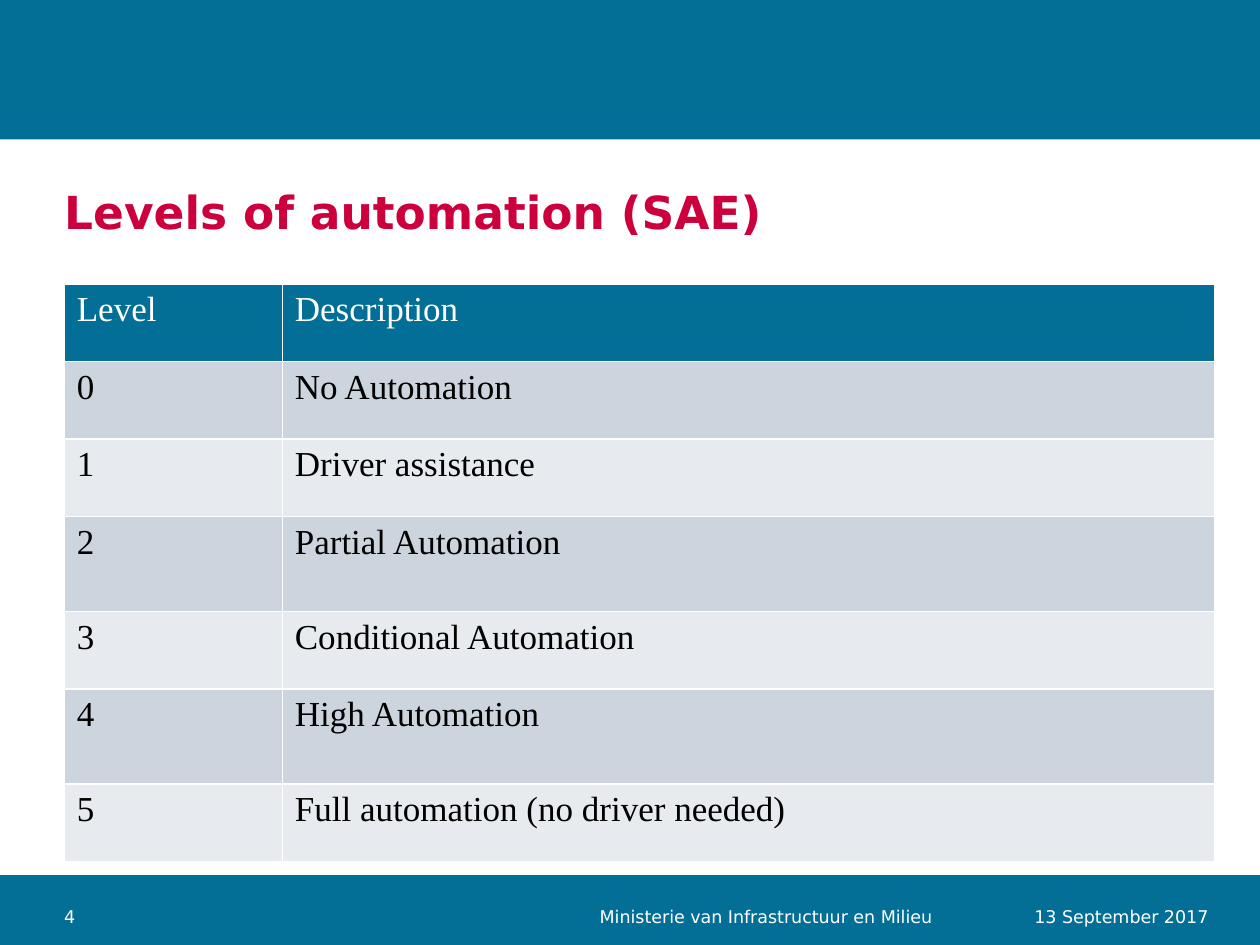
from lxml.etree import SubElement
from pptx import Presentation
from pptx.dml.color import RGBColor
from pptx.enum.shapes import MSO_SHAPE
from pptx.enum.text import MSO_ANCHOR, MSO_AUTO_SIZE, PP_ALIGN
from pptx.oxml.ns import qn
from pptx.util import Pt

HUES = {"blue": "046F96", "red": "CC003D", "white": "FFFFFF", "black": "000000",
        "dark": "CCD5DD", "light": "E7EBEF"}
TITLE = "Levels of automation (SAE)"
ROWS = [
    ("Level", "Description"),
    ("0", "No Automation"),
    ("1", "Driver assistance"),
    ("2", "Partial Automation"),
    ("3", "Conditional Automation"),
    ("4", "High Automation"),
    ("5", "Full automation (no driver needed)"),
]
COLS = (124.6, 532.9)
HIGH = (44.3, 44.3, 44.3, 54.2, 44.3, 54.2, 44.3)
BARS = [(0, 79.7), (500, 40)]
FOOT = [
    ("4", (36.7, 520.5, 150, 9.5), PP_ALIGN.LEFT),
    ("13 September 2017", (571.7, 520.5, 118.8, 9.5), PP_ALIGN.RIGHT),
    ("Ministerie van Infrastructuur en Milieu", (342.7, 514, 244, 16), PP_ALIGN.LEFT),
]
FONTS = {
    "title": {"name": "DejaVu Sans", "size": Pt(26), "bold": True},
    "cell": {"name": "Times New Roman", "size": Pt(20), "bold": False},
    "foot": {"name": "DejaVu Sans", "size": Pt(10), "bold": False},
}
FRAME = {"margin_left": 0, "margin_top": 0, "margin_right": 0, "margin_bottom": 0,
         "word_wrap": True, "auto_size": MSO_AUTO_SIZE.NONE}


def apply(item, vals):
    for key, val in vals.items():
        setattr(item, key, val)


def tint(name):
    return RGBColor.from_string(HUES[name])


def paint(item, name):
    item.fill.solid()
    item.fill.fore_color.rgb = tint(name)


def write(frame, text, style, hue, align=PP_ALIGN.LEFT):
    frame.text = text
    para = frame.paragraphs[0]
    para.alignment = align
    font = para.runs[0].font
    apply(font, FONTS[style])
    font.color.rgb = tint(hue)


def edge(cell):
    props = cell._tc.get_or_add_tcPr()
    for spot, side in enumerate(("lnL", "lnR", "lnT", "lnB")):
        line = props.makeelement(qn(f"a:{side}"), {"w": str(Pt(1))})
        fill = SubElement(line, qn("a:solidFill"))
        SubElement(fill, qn("a:srgbClr"), val=HUES["white"])
        props.insert(spot, line)


def main():
    """Build the slide on levels of automation."""
    deck = Presentation()
    apply(deck, {"slide_width": Pt(720), "slide_height": Pt(540)})
    slide = deck.slides.add_slide(deck.slide_layouts[5])
    shapes = slide.shapes

    for top, high in BARS:
        bar = shapes.add_shape(MSO_SHAPE.RECTANGLE, 0, Pt(top), Pt(720), Pt(high))
        bar.shadow.inherit = False
        paint(bar, "blue")
        bar.line.fill.background()

    title = shapes.title
    apply(title, {"left": Pt(36.7), "top": Pt(101.5), "width": Pt(661.7), "height": Pt(38.9)})
    apply(title.text_frame, {**FRAME, "vertical_anchor": MSO_ANCHOR.MIDDLE})
    write(title.text_frame, TITLE, "title", "red")

    grid = shapes.add_table(len(ROWS), len(COLS), Pt(36.7), Pt(162.4),
                            Pt(sum(COLS)), Pt(sum(HIGH))).table
    for col, wide in zip(grid.columns, COLS):
        col.width = Pt(wide)
    for num, (row, high) in enumerate(zip(grid.rows, HIGH)):
        row.height = Pt(high)
        back = ("dark" if num % 2 else "light") if num else "blue"
        for cell, text in zip(row.cells, ROWS[num]):
            write(cell.text_frame, text, "cell", "black" if num else "white")
            paint(cell, back)
            edge(cell)

    for text, place, align in FOOT:
        frame = shapes.add_textbox(*map(Pt, place)).text_frame
        apply(frame, {**FRAME, "vertical_anchor": MSO_ANCHOR.BOTTOM})
        write(frame, text, "foot", "white", align)

    deck.save("out.pptx")


if __name__ == "__main__":
    main()
